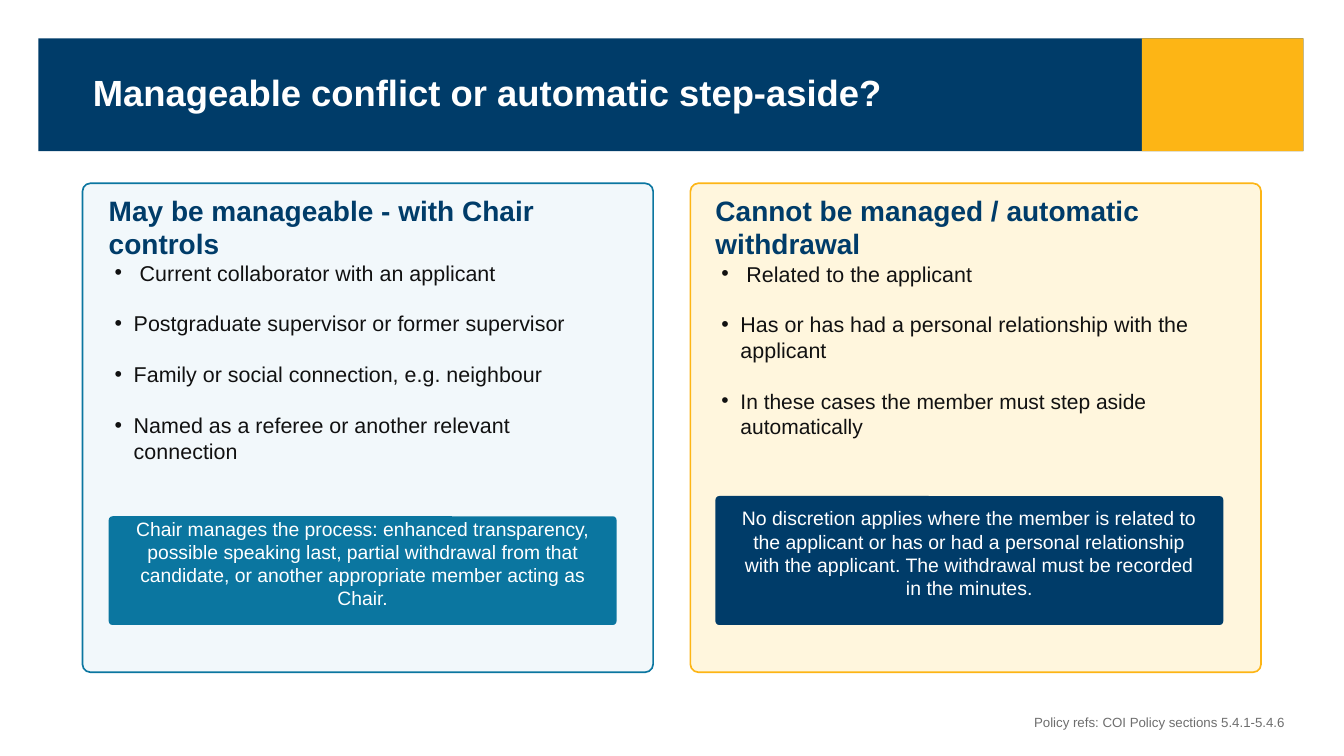
import pptx
import pptx.dml.color
import pptx.enum.shapes
import pptx.enum.text
import pptx.oxml
import pptx.oxml.ns
import pptx.util

Cm = pptx.util.Cm
Pt = pptx.util.Pt
MSO_SHAPE = pptx.enum.shapes.MSO_SHAPE
ALIGN = pptx.enum.text.PP_ALIGN
NAVY, GOLD, TEAL, WHITE = "003C69", "FDB515", "0B76A0", "FFFFFF"

# Card geometry in centimetres
CARD_TOP, CARD_WIDTH, CARD_HEIGHT = 4.62, 14.38, 12.32
CALLOUT_BOTTOM, CALLOUT_WIDTH = 15.75, 12.8

CARDS = [
    {
        "left": 2.08, "content_left": 2.74, "fill": "F2F8FB", "line": TEAL,
        "heading": "May be manageable - with Chair controls",
        "items": [
            " Current collaborator with an applicant",
            "Postgraduate supervisor or former supervisor",
            "Family or social connection, e.g. neighbour",
            "Named as a referee or another relevant connection",
        ],
        "list_height": 5.13, "last_size": 15.3,
        "callout": "Chair manages the process: enhanced transparency, possible speaking "
                   "last, partial withdrawal from that candidate, or another appropriate "
                   "member acting as Chair.",
        "callout_fill": TEAL, "callout_height": 2.74, "callout_size": 13.8,
    },
    {
        "left": 17.4, "content_left": 18.03, "fill": "FFF6DD", "line": GOLD,
        "heading": "Cannot be managed / automatic withdrawal",
        "items": [
            " Related to the applicant",
            "Has or has had a personal relationship with the applicant",
            "In these cases the member must step aside automatically",
        ],
        "list_height": 4.52, "last_size": 15,
        "callout": "No discretion applies where the member is related to the applicant "
                   "or has or had a personal relationship with the applicant. The "
                   "withdrawal must be recorded in the minutes.",
        "callout_fill": NAVY, "callout_height": 3.25, "callout_size": 13.9,
    },
]


def color(value):
    return pptx.dml.color.RGBColor.from_string(value)


def apply_format(target, values):
    for name, value in values.items():
        setattr(target, name, value)


def format_paragraph(paragraph, size, text_color, bold=False, align=ALIGN.LEFT, gap=0):
    apply_format(paragraph, {"alignment": align, "space_before": Pt(gap), "space_after": Pt(0)})
    apply_format(paragraph.font, {"name": "Arial", "size": Pt(size), "bold": bold})
    paragraph.font.color.rgb = color(text_color)


def format_frame(frame, side=0, bottom=0):
    apply_format(frame, {
        "word_wrap": True,
        "auto_size": pptx.enum.text.MSO_AUTO_SIZE.NONE,
        "vertical_anchor": pptx.enum.text.MSO_ANCHOR.MIDDLE,
        "margin_left": Cm(side), "margin_right": Cm(side),
        "margin_top": 0, "margin_bottom": Cm(bottom),
    })


def add_block(slide, box, fill, line=None, radius=0):
    kind = MSO_SHAPE.ROUNDED_RECTANGLE if radius else MSO_SHAPE.RECTANGLE
    shape = slide.shapes.add_shape(kind, *map(Cm, box))
    shape.shadow.inherit = False
    shape.fill.solid()
    shape.fill.fore_color.rgb = color(fill)
    if radius:
        shape.adjustments[0] = radius / min(box[2:])
    if line:
        shape.line.color.rgb = color(line)
        shape.line.width = Pt(1.2)
    else:
        shape.line.fill.background()
    return shape


def place_placeholder(slide, placeholder, box):
    names = ("left", "top", "width", "height")
    apply_format(placeholder, dict(zip(names, map(Cm, box))))
    format_frame(placeholder.text_frame)
    # Bring it in front of the blocks drawn so far
    slide.shapes._spTree.append(placeholder._element)


def fill_heading(slide, placeholder, box, text, size, text_color):
    place_placeholder(slide, placeholder, box)
    placeholder.text_frame.text = text
    format_paragraph(placeholder.text_frame.paragraphs[0], size, text_color, bold=True)


def fill_list(slide, placeholder, box, items, last_size):
    place_placeholder(slide, placeholder, box)
    frame = placeholder.text_frame
    frame.text = "\n".join(items)
    for index, paragraph in enumerate(frame.paragraphs):
        properties = paragraph._p.get_or_add_pPr()
        properties.set("marL", str(Cm(0.48)))
        properties.set("indent", str(-Cm(0.48)))
        bullet = pptx.oxml.parse_xml(
            f'<a:buChar {pptx.oxml.ns.nsdecls("a")} char="•"/>')
        properties.append(bullet)
        size = last_size if index == len(items) - 1 else 15.3
        format_paragraph(paragraph, size, "111111", gap=18 if index else 0)


def add_card(slide, card, heading, body):
    left = card["content_left"]
    add_block(slide, (card["left"], CARD_TOP, CARD_WIDTH, CARD_HEIGHT),
              card["fill"], card["line"], radius=0.2)
    fill_heading(slide, heading, (left, 5.28, 12.93, 0.86), card["heading"], 20, NAVY)
    fill_list(slide, body, (left + 0.15, 6.55, 12.5, card["list_height"]),
              card["items"], card["last_size"])

    # Callout at the foot of the card
    height = card["callout_height"]
    callout = add_block(slide, (left, CALLOUT_BOTTOM - height, CALLOUT_WIDTH, height),
                        card["callout_fill"], radius=0.1)
    format_frame(callout.text_frame, side=0.5, bottom=0.37)
    callout.text_frame.text = card["callout"]
    format_paragraph(callout.text_frame.paragraphs[0], card["callout_size"], WHITE,
                     align=ALIGN.CENTER)


def add_reference(slide, box, text):
    shape = slide.shapes.add_textbox(*map(Cm, box))
    format_frame(shape.text_frame)
    shape.text_frame.text = text
    format_paragraph(shape.text_frame.paragraphs[0], 9.5, "6E6E6E", align=ALIGN.RIGHT)


def main():
    presentation = pptx.Presentation()
    presentation.slide_width, presentation.slide_height = Cm(33.87), Cm(19.05)
    slide = presentation.slides.add_slide(presentation.slide_layouts.get_by_name("Comparison"))
    title, *parts = slide.placeholders

    # Title band
    add_block(slide, (0.97, 0.97, 31.88, 2.84), NAVY)
    add_block(slide, (28.78, 0.97, 4.07, 2.84), GOLD)
    fill_heading(slide, title, (2.34, 1.83, 25.15, 0.97),
                 "Manageable conflict or automatic step-aside?", 26, WHITE)

    # Comparison cards
    for card, heading, body in zip(CARDS, parts[::2], parts[1::2]):
        add_card(slide, card, heading, body)

    # Policy reference
    add_reference(slide, (1.52, 17.98, 30.86, 0.46),
                  "Policy refs: COI Policy sections 5.4.1-5.4.6")
    presentation.save("out.pptx")


if __name__ == "__main__":
    main()
